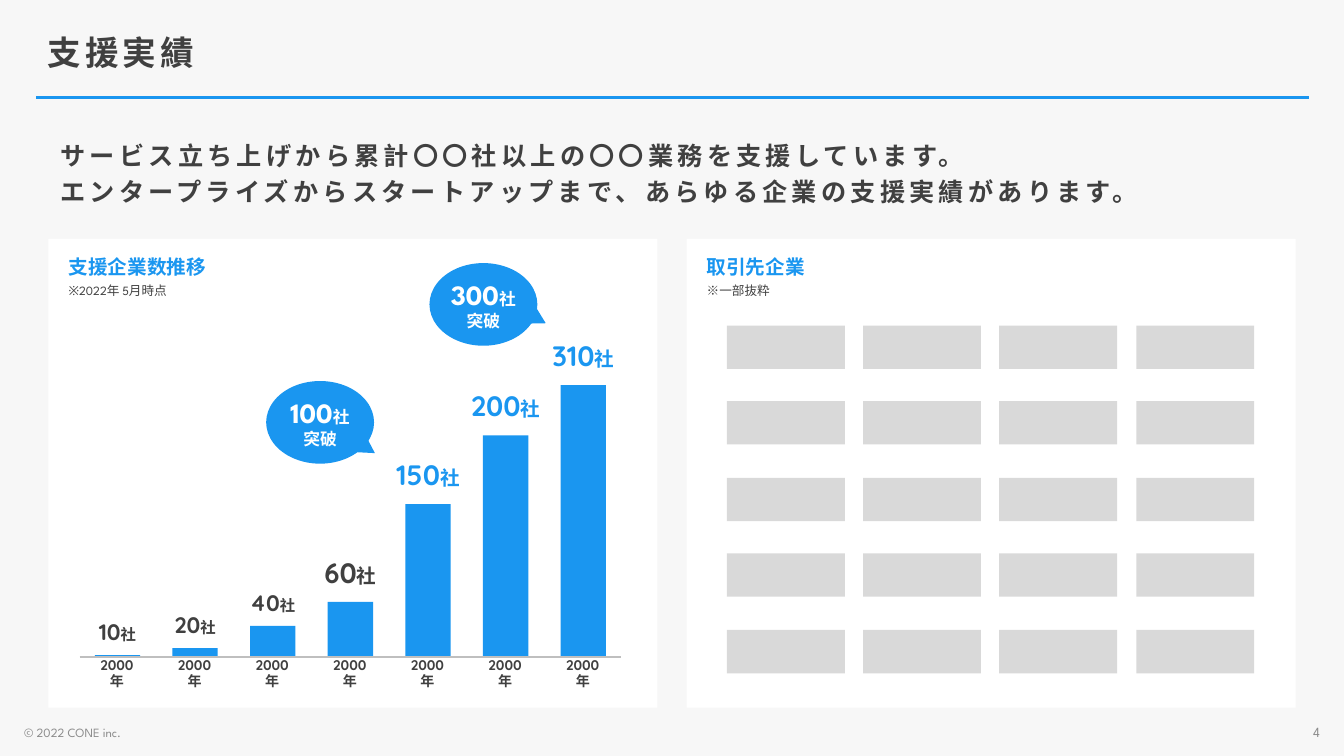
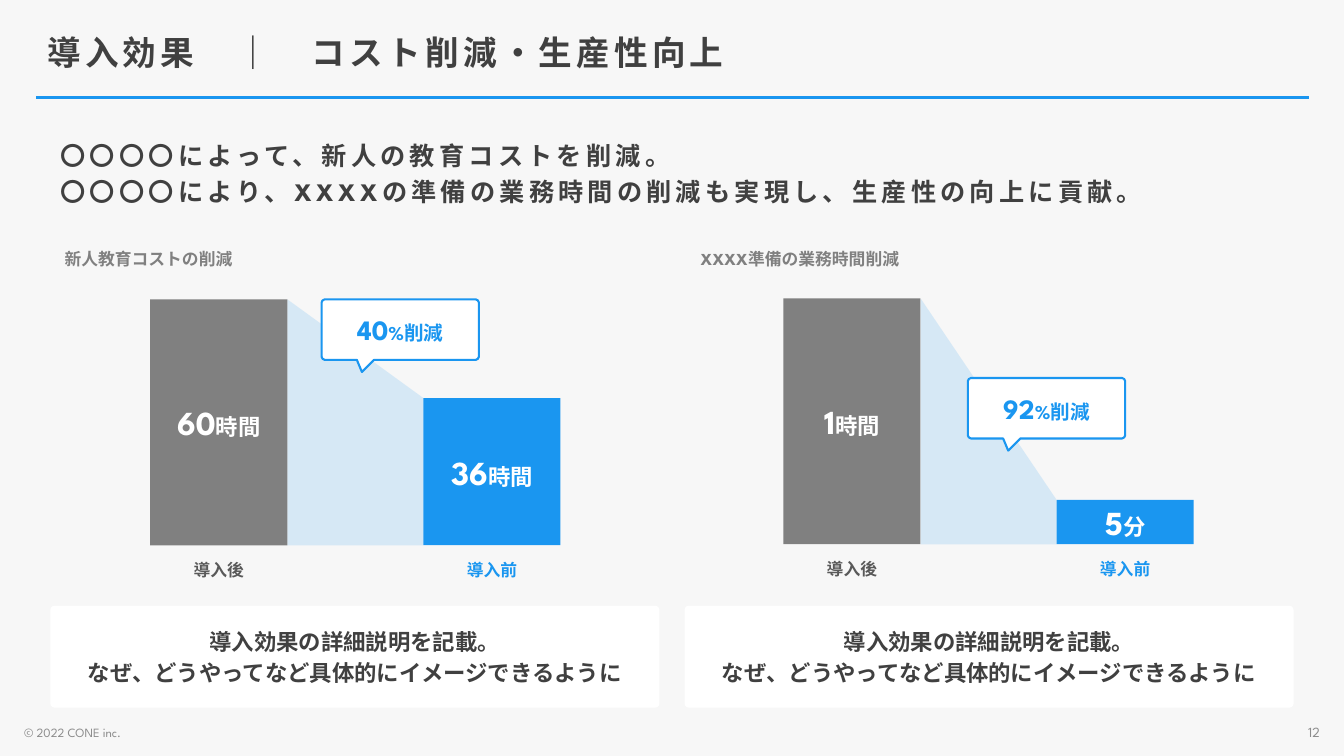
"""Build two slides on client growth and on the gains after adoption."""
from dataclasses import dataclass
from typing import Any

from lxml import etree
from pptx import Presentation
from pptx.dml.color import RGBColor
from pptx.enum.shapes import MSO_CONNECTOR, MSO_SHAPE
from pptx.enum.text import MSO_ANCHOR, MSO_AUTO_SIZE, PP_ALIGN
from pptx.oxml.ns import qn
from pptx.slide import Slide
from pptx.util import Emu, Pt

PX = 9144
WIDE, HIGH = 1333, 750

BLUE = RGBColor(0x1A, 0x96, 0xF0)
DARK = RGBColor(0x40, 0x40, 0x40)
SLATE = RGBColor(0x59, 0x59, 0x59)
GRAY = RGBColor(0x80, 0x80, 0x80)
MUTED = RGBColor(0x8C, 0x8C, 0x8C)
RULE = RGBColor(0xBF, 0xBF, 0xBF)
TILE = RGBColor(0xD9, 0xD9, 0xD9)
PAPER = RGBColor(0xF7, 0xF7, 0xF7)
WHITE = RGBColor(0xFF, 0xFF, 0xFF)

SPARTAN, SAND, NOTO = "League Spartan", "Quicksand", "Noto Sans CJK JP"

LEFT, MID, RIGHT = PP_ALIGN.LEFT, PP_ALIGN.CENTER, PP_ALIGN.RIGHT
TOP, CENTER = MSO_ANCHOR.TOP, MSO_ANCHOR.MIDDLE
FIXED = MSO_AUTO_SIZE.NONE
RECT, ROUND = MSO_SHAPE.RECTANGLE, MSO_SHAPE.ROUNDED_RECTANGLE
OVAL, PEAK = MSO_SHAPE.OVAL, MSO_SHAPE.ISOSCELES_TRIANGLE
STRAIGHT = MSO_CONNECTOR.STRAIGHT

PLAIN = (10, 5, 10, 5)
PANEL = (20, 16, 10, 5)
CARD = (10, 8, 10, 8)

Area = tuple[int, int, int, int]


@dataclass(frozen=True)
class Run:
    """A piece of text with one look."""
    text: str
    size: int
    color: RGBColor = DARK
    bold: bool = True
    face: str = SPARTAN
    track: int = 0


@dataclass(frozen=True)
class Bar:
    """A year's client count and the height of its bar."""
    count: str
    tall: int
    big: bool = True
    color: RGBColor = BLUE


@dataclass(frozen=True)
class Bubble:
    """A milestone bubble with its tail offset and turn."""
    count: str
    x: int
    y: int
    tail: tuple[int, int]
    turn: float


@dataclass(frozen=True)
class Panel:
    """A white panel with a heading and a note."""
    x: int
    head: str
    note: Run


@dataclass(frozen=True)
class Half:
    """One before and after chart with its card."""
    head: str
    edge: int
    card: int
    x: int
    y: int
    old: tuple[str, str]
    new: tuple[str, str]
    tall: int
    cut: str
    call: tuple[int, int]


BARS = (
    Bar("10", 2, False, DARK), Bar("20", 9, False, DARK),
    Bar("40", 31, False, DARK), Bar("60", 55, True, DARK),
    Bar("150", 152), Bar("200", 220), Bar("310", 270),
)
BUBBLES = (
    Bubble("100", 264, 378, (80, 50), 122.7),
    Bubble("300", 426, 261, (87, 39), 118.7),
)
PANELS = (
    Panel(681, "取引先企業", Run("※一部抜粋", 9, bold=False, face=NOTO)),
    Panel(48, "支援企業数推移", Run("※2022年 5月時点", 9, bold=False)),
)
HALVES = (
    Half("新人教育コストの削減", 48, 50, 149, 297, ("60", "時間"),
         ("36", "時間"), 146, "40", (319, 297)),
    Half("XXXX準備の業務時間削減", 679, 679, 777, 296, ("1", "時間"),
         ("5", "分"), 44, "92", (960, 375)),
)
DETAIL = ("導入効果の詳細説明を記載。",
          "なぜ、どうやってなど具体的にイメージできるように")


def apply(thing: Any, looks: dict[str, Any]) -> None:
    """Set each named value on an object."""
    for name, value in looks.items():
        setattr(thing, name, value)


def scale(area: Area) -> list[Emu]:
    """Turn px lengths into EMU."""
    return [Emu(n * PX) for n in area]


def spread(first: int, last: int, count: int) -> list[int]:
    """Return evenly spaced places from first to last."""
    return [first + (last - first) * i // (count - 1) for i in range(count)]


def write(shape: Any, paras: list[list[Run]], align: PP_ALIGN = MID,
          anchor: MSO_ANCHOR = CENTER, pad: Area = PLAIN, wrap: bool = True,
          gap: int = 0, lead: float = 1.0) -> None:
    """Fill a shape with formatted paragraphs."""
    frame = shape.text_frame
    left, top, right, low = scale(pad)
    apply(frame, {
        "auto_size": FIXED, "word_wrap": wrap, "vertical_anchor": anchor,
        "margin_left": left, "margin_top": top,
        "margin_right": right, "margin_bottom": low,
    })
    for i, runs in enumerate(paras):
        para = frame.add_paragraph() if i else frame.paragraphs[0]
        props = para._p.get_or_add_pPr()
        apply_xml = {"marL": "0", "indent": "0"}
        for name, value in apply_xml.items():
            props.set(name, value)
        etree.SubElement(props, qn("a:buNone"))
        apply(para, {"alignment": align, "line_spacing": lead,
                     "space_before": Pt(gap if i else 0), "space_after": Pt(0)})
        for item in runs:
            run = para.add_run()
            run.text = item.text
            apply(run.font, {"size": Pt(item.size), "bold": item.bold,
                             "name": item.face})
            run.font.color.rgb = item.color
            look = run._r.get_or_add_rPr()
            etree.SubElement(look, qn("a:ea")).set("typeface", NOTO)
            if item.track:
                look.set("spc", str(item.track * 100))


def paint(shape: Any, fill: RGBColor, alpha: int = 100) -> None:
    """Give a shape a flat fill with no line or shadow."""
    shape.shadow.inherit = False
    shape.fill.solid()
    shape.fill.fore_color.rgb = fill
    shape.line.fill.background()
    if alpha < 100:
        tone = shape._element.spPr.find(".//" + qn("a:srgbClr"))
        etree.SubElement(tone, qn("a:alpha")).set("val", str(alpha * 1000))


def block(slide: Slide, kind: MSO_SHAPE, area: Area, fill: RGBColor) -> Any:
    """Add a filled preset shape."""
    shape = slide.shapes.add_shape(kind, *scale(area))
    paint(shape, fill)
    if kind == ROUND:
        shape.adjustments[0] = 0.04
    return shape


def label(slide: Slide, area: Area, runs: list[Run], **looks: Any) -> None:
    """Add a text box of one paragraph."""
    write(slide.shapes.add_textbox(*scale(area)), [runs], **looks)


def line(slide: Slide, ends: Area, color: RGBColor, width: int) -> None:
    """Add a straight line."""
    link = slide.shapes.add_connector(STRAIGHT, *scale(ends))
    apply(link.line, {"width": Pt(width)})
    link.line.color.rgb = color
    etree.SubElement(link._element.spPr, qn("a:effectLst"))


def outline(slide: Slide, points: list[tuple[int, int]]) -> Any:
    """Add a closed shape through the points."""
    build = slide.shapes.build_freeform(*points[0], scale=float(PX))
    build.add_line_segments(points[1:], close=True)
    return build.convert_to_shape()


def start(deck: Any, title: str, lines: tuple[str, ...], page: str) -> Slide:
    """Add a slide with title, lead text, rule and footer."""
    slide = deck.slides.add_slide(deck.slide_layouts[1])
    head, body = slide.placeholders
    sides = ("left", "top", "width", "height")
    apply(head, dict(zip(sides, scale((37, 21, 1252, 63)))))
    apply(body, dict(zip(sides, scale((50, 127, 1233, 91)))))
    write(head, [[Run(title, 24, track=3)]], LEFT, pad=(10, 8, 10, 5), lead=0.9)
    write(body, [[Run(text, 18, track=3)] for text in lines], LEFT, TOP,
          (10, 16, 10, 5), gap=6, lead=0.9)
    line(slide, (36, 97, 1298, 97), BLUE, 2)
    label(slide, (14, 713, 300, 27),
          [Run("© 2022 CONE inc.", 9, MUTED, False)], align=LEFT)
    label(slide, (1019, 713, 300, 27), [Run(page, 10, MUTED, False)], align=RIGHT)
    return slide


def growth(slide: Slide) -> None:
    """Draw the panels, tiles, bars and bubbles."""
    for panel in PANELS:
        shape = block(slide, RECT, (panel.x, 237, 604, 465), WHITE)
        write(shape, [[Run(panel.head, 14, BLUE, face=NOTO)], [panel.note]],
              LEFT, TOP, PANEL, gap=3)
    for y in spread(323, 625, 5):
        for x in spread(721, 1127, 4):
            block(slide, RECT, (x, y, 117, 43), TILE)
    base = 652
    for x, bar in zip(spread(94, 556, len(BARS)), BARS):
        top = base - bar.tall
        high, size, unit = (59, 20, 14) if bar.big else (47, 16, 11)
        block(slide, RECT, (x, top, 45, bar.tall), BLUE)
        label(slide, (x - 27, top - high, 99, high),
              [Run(bar.count, size, bar.color, face=SAND),
               Run("社", unit, bar.color, face=SAND)], wrap=False)
        label(slide, (x - 11, base, 66, 31), [Run("2000年", 10, face=SAND)])
    line(slide, (79, base, 616, base), RULE, 1)
    for item in BUBBLES:
        oval = block(slide, OVAL, (item.x, item.y, 107, 82), BLUE)
        write(oval, [[Run(item.count, 20, WHITE), Run("社", 12, WHITE)],
                     [Run("突破", 12, WHITE)]], wrap=False)
        right, down = item.tail
        tail = block(slide, PEAK, (item.x + right, item.y + down, 32, 28), BLUE)
        tail.rotation = item.turn


def callout(slide: Slide, x: int, y: int, cut: str) -> None:
    """Draw a bordered callout with a tail below."""
    wide, high = 156, 60
    ring = [(3, 0), (wide - 3, 0), (wide - 1, 1), (wide, 3),
            (wide, high - 3), (wide - 1, high - 1), (wide - 3, high),
            (52, high), (40, 72), (35, high), (3, high), (1, high - 1),
            (0, high - 3), (0, 3), (1, 1)]
    shape = outline(slide, [(x + dx, y + dy) for dx, dy in ring])
    paint(shape, WHITE)
    shape.line.color.rgb = BLUE
    shape.line.width = Pt(1.5)
    write(shape, [[Run(cut, 20, BLUE), Run("%削減", 14, BLUE)]],
          pad=(10, 8, 10, 20))


def effect(slide: Slide) -> None:
    """Draw both before and after charts with their cards."""
    wide, tall = 136, 244
    for half in HALVES:
        label(slide, (half.edge, 237, 605, 40), [Run(half.head, 12, GRAY)],
              align=LEFT, pad=(16, 8, 10, 8))
        card = block(slide, ROUND, (half.card, 601, 604, 101), WHITE)
        write(card, [[Run(text, 16)] for text in DETAIL], pad=CARD, gap=3)
        base, near, far = half.y + tall, half.x + wide, half.x + 271
        slope = outline(slide, [(near, half.y), (far, base - half.tall),
                                (far, base), (near, base)])
        paint(slope, BLUE, 15)
        for x, high, fill, (count, unit), name, tint in (
                (half.x, tall, GRAY, half.old, "導入後", SLATE),
                (far, half.tall, BLUE, half.new, "導入前", BLUE)):
            bar = block(slide, RECT, (x, base - high, wide, high), fill)
            write(bar, [[Run(count, 24, WHITE), Run(unit, 16, WHITE)]])
            label(slide, (x, base + 15, wide, 19), [Run(name, 12, tint)],
                  pad=(0, 0, 0, 0))
        callout(slide, *half.call, half.cut)


def main() -> None:
    """Build and save the deck."""
    deck = Presentation()
    apply(deck, {"slide_width": Emu(WIDE * PX), "slide_height": Emu(HIGH * PX)})
    back = deck.slide_master.background.fill
    back.solid()
    back.fore_color.rgb = PAPER
    growth(start(deck, "支援実績", (
        "サービス立ち上げから累計〇〇社以上の〇〇業務を支援しています。",
        "エンタープライズからスタートアップまで、あらゆる企業の支援実績があります。",
    ), "4"))
    effect(start(deck, "導入効果　｜　コスト削減・生産性向上", (
        "〇〇〇〇によって、新人の教育コストを削減。",
        "〇〇〇〇により、XXXXの準備の業務時間の削減も実現し、生産性の向上に貢献。",
    ), "12"))
    deck.save("out.pptx")


if __name__ == "__main__":
    main()
